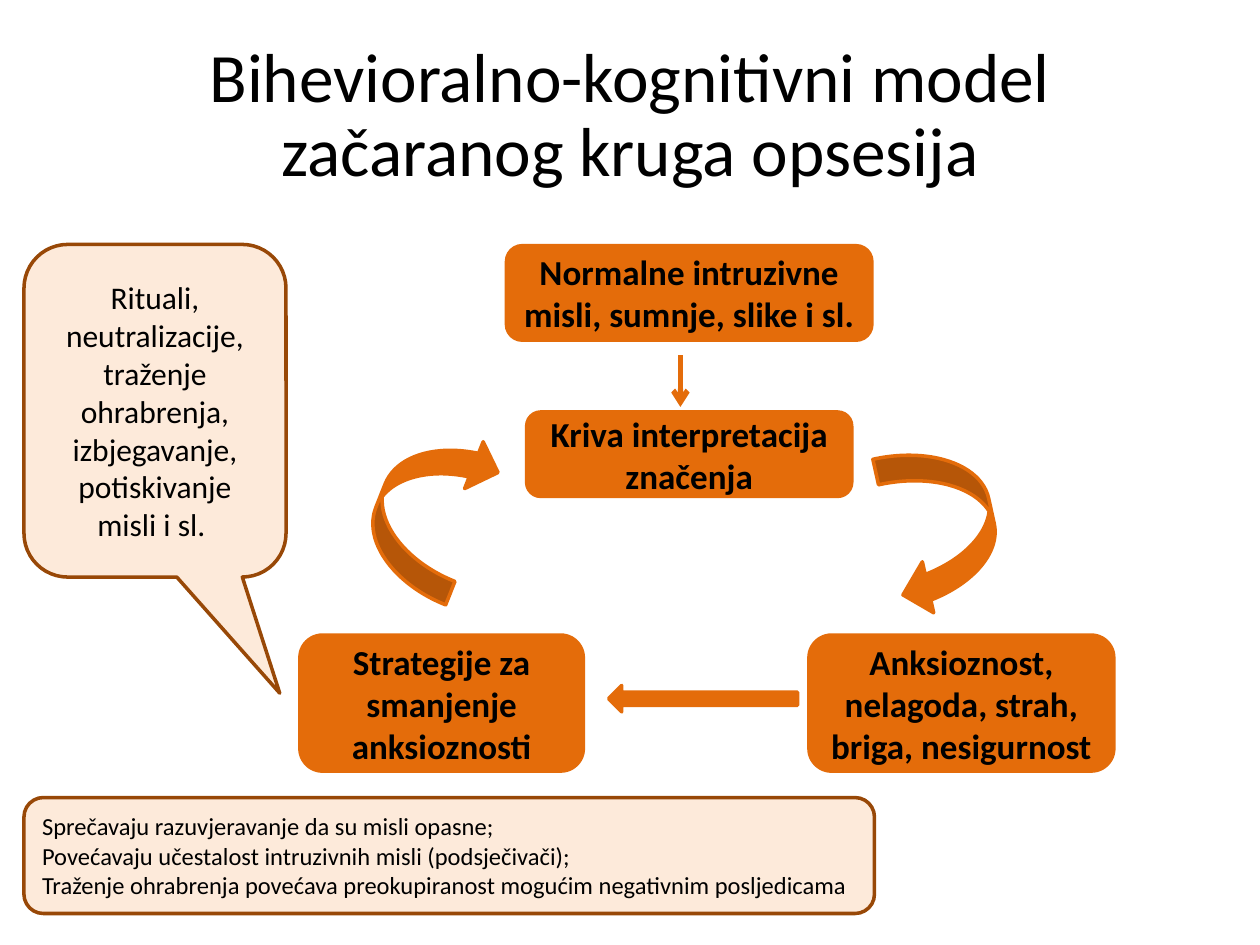
from collections import namedtuple
from dataclasses import dataclass

from lxml.etree import SubElement
from pptx import Presentation
from pptx.dml.color import RGBColor
from pptx.enum.shapes import MSO_CONNECTOR, MSO_SHAPE
from pptx.enum.text import MSO_ANCHOR, PP_ALIGN
from pptx.oxml.ns import qn
from pptx.util import Pt

PX = 9144  # EMU in one px, 100 px to the inch
Box = namedtuple("Box", "left top width height")


@dataclass(frozen=True)
class Theme:
    font: str = "Calibri"
    text: str = "000000"
    accent: str = "E46C0A"
    pale: str = "FDEADA"
    edge: str = "984807"
    title_size: float = 39.6
    title_spacing: int = 42
    step_size: int = 20
    callout_size: int = 18
    note_size: int = 14
    outline: int = 2
    arrow: int = 3


THEME = Theme()


def emu(*lengths):
    return [length * PX for length in lengths]


def inside(box, left, top, width, height):
    return Box(box.left + left, box.top + top, width, height)


def write(shape, text, size, bold=False, align=PP_ALIGN.CENTER, spacing=None):
    frame = shape.text_frame
    frame.word_wrap = True
    frame.vertical_anchor = MSO_ANCHOR.MIDDLE
    frame.text = text
    for paragraph in frame.paragraphs:
        paragraph.alignment = align
        if spacing:
            paragraph.line_spacing = Pt(spacing)
        font = paragraph.runs[0].font
        font.name, font.size, font.bold = THEME.font, Pt(size), bold
        font.color.rgb = RGBColor.from_string(THEME.text)


def add_panel(slide, kind, box, fill=THEME.accent, line=THEME.accent, rotation=0):
    shape = slide.shapes.add_shape(kind, *emu(*box))
    shape.shadow.inherit = False
    shape.fill.solid()
    shape.fill.fore_color.rgb = RGBColor.from_string(fill)
    shape.line.color.rgb = RGBColor.from_string(line)
    shape.line.width = Pt(THEME.outline)
    shape.rotation = rotation
    return shape


def add_down_arrow(slide, x, top, bottom):
    connector = slide.shapes.add_connector(
        MSO_CONNECTOR.STRAIGHT, *emu(x, top, x, bottom))
    connector.line.color.rgb = RGBColor.from_string(THEME.accent)
    connector.line.width = Pt(THEME.arrow)
    SubElement(connector.line._get_or_add_ln(), qn("a:tailEnd"), type="arrow")
    SubElement(connector._element.spPr, qn("a:effectLst"))


def add_title(slide, box):
    title = slide.shapes.add_textbox(*emu(*box))
    write(title, "Bihevioralno-kognitivni model začaranog kruga opsesija",
          THEME.title_size, spacing=THEME.title_spacing)


def add_cycle(slide, box):
    # Steps of the circle
    steps = [
        ("Strategije za smanjenje anksioznosti", (0, 309, 225, 108)),
        ("Anksioznost, nelagoda, strah, briga, nesigurnost", (404, 309, 242, 108)),
        ("Normalne intruzivne misli, sumnje, slike i sl.", (164, 0, 290, 75)),
        ("Kriva interpretacija značenja", (180, 132, 258, 67)),
    ]
    for text, place in steps:
        step = add_panel(slide, MSO_SHAPE.ROUNDED_RECTANGLE, inside(box, *place))
        write(step, text, THEME.step_size, bold=True)

    # Arrows between the steps
    add_down_arrow(slide, box.left + 302, box.top + 87, box.top + 128)
    arrows = [
        (MSO_SHAPE.CURVED_LEFT_ARROW, (63, 142, 80, 133), 201.6),
        (MSO_SHAPE.CURVED_LEFT_ARROW, (468, 159, 83, 131), 347.5),
        (MSO_SHAPE.LEFT_ARROW, (245, 349, 150, 21), 0),
    ]
    for kind, place, rotation in arrows:
        add_panel(slide, kind, inside(box, *place), rotation=rotation)


def add_notes(slide, box):
    # Callout pointing at the strategies
    callout = add_panel(slide, MSO_SHAPE.ROUNDED_RECTANGULAR_CALLOUT,
                        inside(box, 0, 0, 208, 264), THEME.pale, THEME.edge)
    for index, value in enumerate((0.476, 0.849, 0.167)):
        callout.adjustments[index] = value
    write(callout, "Rituali, neutralizacije, traženje ohrabrenja, "
          "izbjegavanje, potiskivanje misli i sl. ", THEME.callout_size)

    # Consequences along the bottom
    consequences = add_panel(slide, MSO_SHAPE.ROUNDED_RECTANGLE,
                             inside(box, 0, 439, 675, 92), THEME.pale, THEME.edge)
    write(consequences, "\n".join([
        "Sprečavaju razuvjeravanje da su misli opasne;",
        "Povećavaju učestalost intruzivnih misli (podsječivači);",
        "Traženje ohrabrenja povećava preokupiranost mogućim negativnim posljedicama",
    ]), THEME.note_size, align=PP_ALIGN.LEFT)


def main():
    presentation = Presentation()
    presentation.slide_width, presentation.slide_height = emu(1000, 750)
    slide = presentation.slides.add_slide(presentation.slide_layouts[6])
    add_title(slide, Box(50, 30, 900, 125))
    add_cycle(slide, Box(238, 195, 646, 417))
    add_notes(slide, Box(19, 194, 675, 531))
    presentation.save("out.pptx")


if __name__ == "__main__":
    main()
